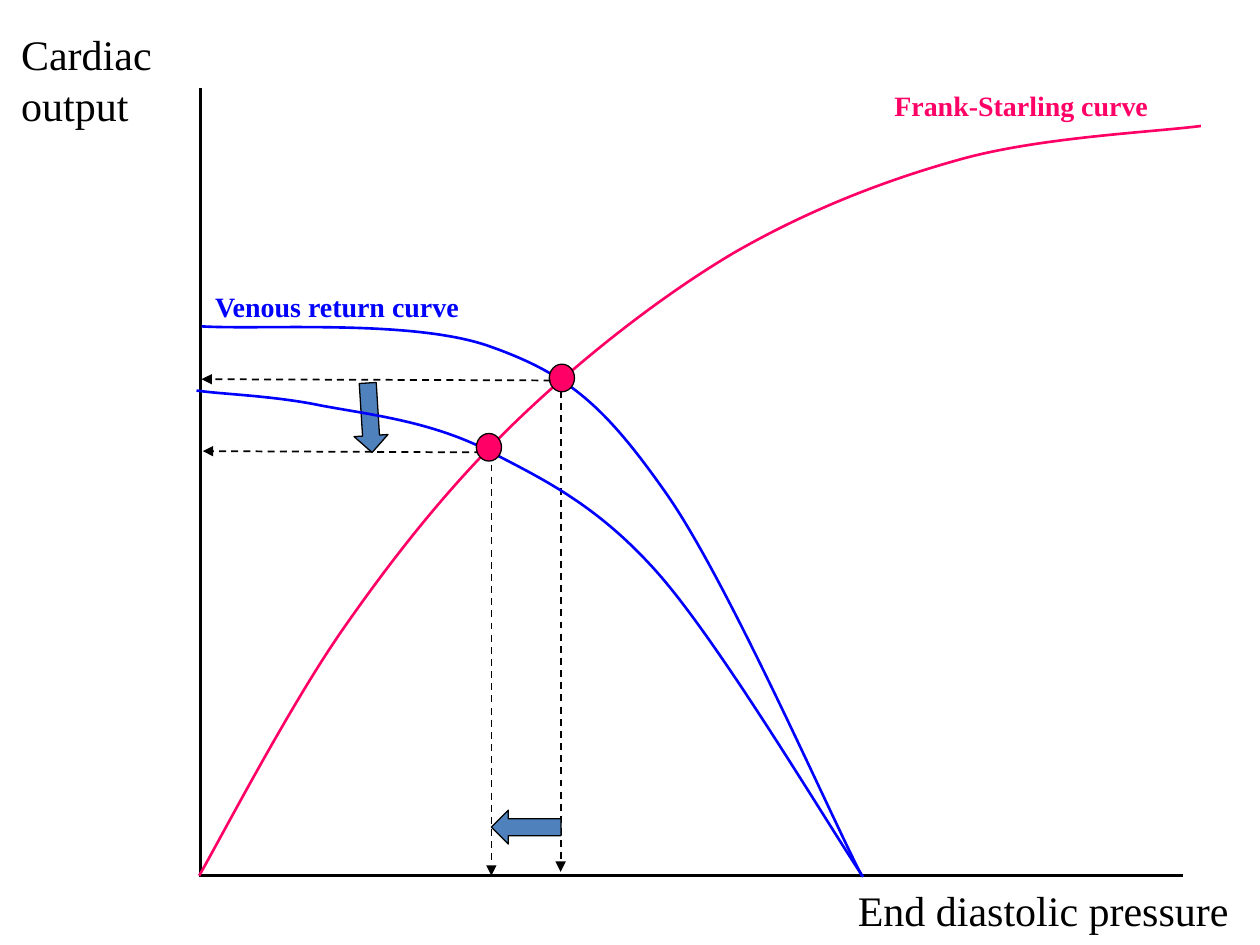
"""Build a slide of cardiac output against end diastolic pressure."""
from dataclasses import dataclass

from lxml import etree
from pptx import Presentation
from pptx.dml.color import RGBColor
from pptx.enum import dml, shapes, text
from pptx.oxml.ns import qn
from pptx.util import Pt

Point = tuple[float, float]


@dataclass(frozen=True)
class Theme:
    black: RGBColor = RGBColor(0, 0, 0)
    pink: RGBColor = RGBColor(0xFF, 0x00, 0x66)
    blue: RGBColor = RGBColor(0x00, 0x00, 0xFF)
    steel: RGBColor = RGBColor(0x4F, 0x81, 0xBD)
    font: str = "Times New Roman"
    axis_size: float = 24
    curve_size: float = 16
    curve_width: float = 1.5
    guide_width: float = 1
    outline_width: float = 0.75


THEME = Theme()


@dataclass(frozen=True)
class Line:
    start: Point
    end: Point
    guide: bool = False


@dataclass(frozen=True)
class Curve:
    color: RGBColor
    points: tuple[Point, ...]


@dataclass(frozen=True)
class Mark:
    kind: shapes.MSO_SHAPE
    left: float
    top: float
    width: float
    height: float
    color: RGBColor
    rotation: float = 0


@dataclass(frozen=True)
class Label:
    content: str
    left: float
    top: float
    width: float
    height: float
    size: float
    color: RGBColor = THEME.black
    bold: bool = False
    wrap: bool = False


def operating_point(left: float, top: float) -> Mark:
    """Describe the dot where two curves cross."""
    return Mark(shapes.MSO_SHAPE.OVAL, left, top, 14.4, 15.8, THEME.pink)


def shift_arrow(left: float, top: float, rotation: float = 0) -> Mark:
    """Describe the block arrow that shows a shift."""
    return Mark(shapes.MSO_SHAPE.LEFT_ARROW, left, top, 39.8, 19.4, THEME.steel, rotation)


FRANK_STARLING = Curve(THEME.pink, (
    (113.8, 500.4), (127.4, 476.6), (166.3, 401.8), (196.6, 358.6),
    (226.8, 315.4), (257.8, 276.5), (295.2, 240.5),
    (331.9, 205.2), (376.6, 169.9), (419, 144.7),
    (461.5, 120.2), (505.4, 103), (550.1, 90.7),
    (594.7, 78.5), (657.4, 75.6), (686.2, 72)))
VENOUS_RETURN = Curve(THEME.blue, (
    (492.5, 500.4), (473.8, 464.4), (416.2, 332.6), (380.9, 282.2),
    (345.6, 231.8), (324.7, 213.8), (280.1, 198),
    (236.2, 182.2), (149.8, 188.6), (115.2, 186.5)))
REDUCED_RETURN = Curve(THEME.blue, (
    (493.2, 501.1), (473.8, 472.3), (412.6, 369.4), (376.6, 328.3),
    (340.6, 287.3), (308.2, 272.9), (276.5, 256.3),
    (244.1, 240.5), (211, 236.9), (183.6, 231.8),
    (156.2, 226.1), (127.4, 225.4), (112.3, 223.2)))

ITEMS = (
    Line((114.5, 50.4), (114.5, 500.4)),
    Line((113.8, 500.4), (676.1, 500.4)),
    FRANK_STARLING,
    VENOUS_RETURN,
    operating_point(313.9, 208.1),
    Line((320.4, 223.2), (320.4, 498.2), True),
    Line((314.6, 217.4), (115.2, 216.7), True),
    shift_arrow(191.5, 229, 266.4),
    shift_arrow(280.8, 463),
    REDUCED_RETURN,
    Line((280.8, 258.5), (280.8, 500.4), True),
    Line((275, 258.5), (115.9, 257.8), True),
    operating_point(272.2, 247.7),
    Label("Venous return curve", 115.9, 162, 155.5, 26.6, THEME.curve_size, THEME.blue, True),
    Label("Frank-Starling curve", 504, 46.8, 161.3, 26.6, THEME.curve_size, THEME.pink, True),
    Label("Cardiac output", 5, 13, 94.3, 65.5, THEME.axis_size, wrap=True),
    Label("End diastolic pressure", 483.1, 501.8, 228.2, 36.7, THEME.axis_size),
)


def draw_line(slide, line: Line) -> None:
    """Draw an axis, or a dashed guide with an arrowhead."""
    ends = [Pt(value) for value in line.start + line.end]
    connector = slide.shapes.add_connector(shapes.MSO_CONNECTOR.STRAIGHT, *ends)
    connector.line.color.rgb = THEME.black
    connector.line.width = Pt(THEME.guide_width if line.guide else THEME.curve_width)
    properties = connector._element.spPr
    if line.guide:
        connector.line.dash_style = dml.MSO_LINE.DASH
        etree.SubElement(properties.find(qn("a:ln")), qn("a:tailEnd"), type="triangle")
    etree.SubElement(properties, qn("a:effectLst"))


def draw_curve(slide, curve: Curve) -> None:
    """Draw a freeform and join its points in threes as Bezier segments."""
    start, *rest = [(Pt(x), Pt(y)) for x, y in curve.points]
    builder = slide.shapes.build_freeform(*start)
    builder.add_line_segments(rest, close=False)
    shape = builder.convert_to_shape()
    outline = shape._element.spPr.find(".//" + qn("a:path"))
    segments = outline.findall(qn("a:lnTo"))
    for first in range(0, len(segments), 3):
        bezier = etree.SubElement(outline, qn("a:cubicBezTo"))
        for segment in segments[first:first + 3]:
            bezier.append(segment[0])
            outline.remove(segment)
    shape.shadow.inherit = False
    shape.fill.background()
    shape.line.color.rgb = curve.color
    shape.line.width = Pt(THEME.curve_width)


def draw_mark(slide, mark: Mark) -> None:
    """Draw a filled preset shape with a thin outline."""
    box = [Pt(value) for value in (mark.left, mark.top, mark.width, mark.height)]
    shape = slide.shapes.add_shape(mark.kind, *box)
    shape.rotation = mark.rotation
    shape.shadow.inherit = False
    shape.fill.solid()
    shape.fill.fore_color.rgb = mark.color
    shape.line.color.rgb = THEME.black
    shape.line.width = Pt(THEME.outline_width)


def draw_label(slide, label: Label) -> None:
    """Draw a text box that fits its text."""
    box = [Pt(value) for value in (label.left, label.top, label.width, label.height)]
    frame = slide.shapes.add_textbox(*box).text_frame
    frame.word_wrap = label.wrap
    frame.auto_size = text.MSO_AUTO_SIZE.SHAPE_TO_FIT_TEXT
    paragraph = frame.paragraphs[0]
    paragraph.text = label.content
    paragraph.font.name = THEME.font
    paragraph.font.size = Pt(label.size)
    paragraph.font.bold = label.bold
    paragraph.font.color.rgb = label.color


DRAWERS = {Line: draw_line, Curve: draw_curve, Mark: draw_mark, Label: draw_label}


def main() -> None:
    """Build and save the presentation."""
    presentation = Presentation()
    presentation.slide_width, presentation.slide_height = Pt(720), Pt(540)
    slide = presentation.slides.add_slide(presentation.slide_layouts[6])
    for item in ITEMS:
        DRAWERS[type(item)](slide, item)
    presentation.save("out.pptx")


if __name__ == "__main__":
    main()
